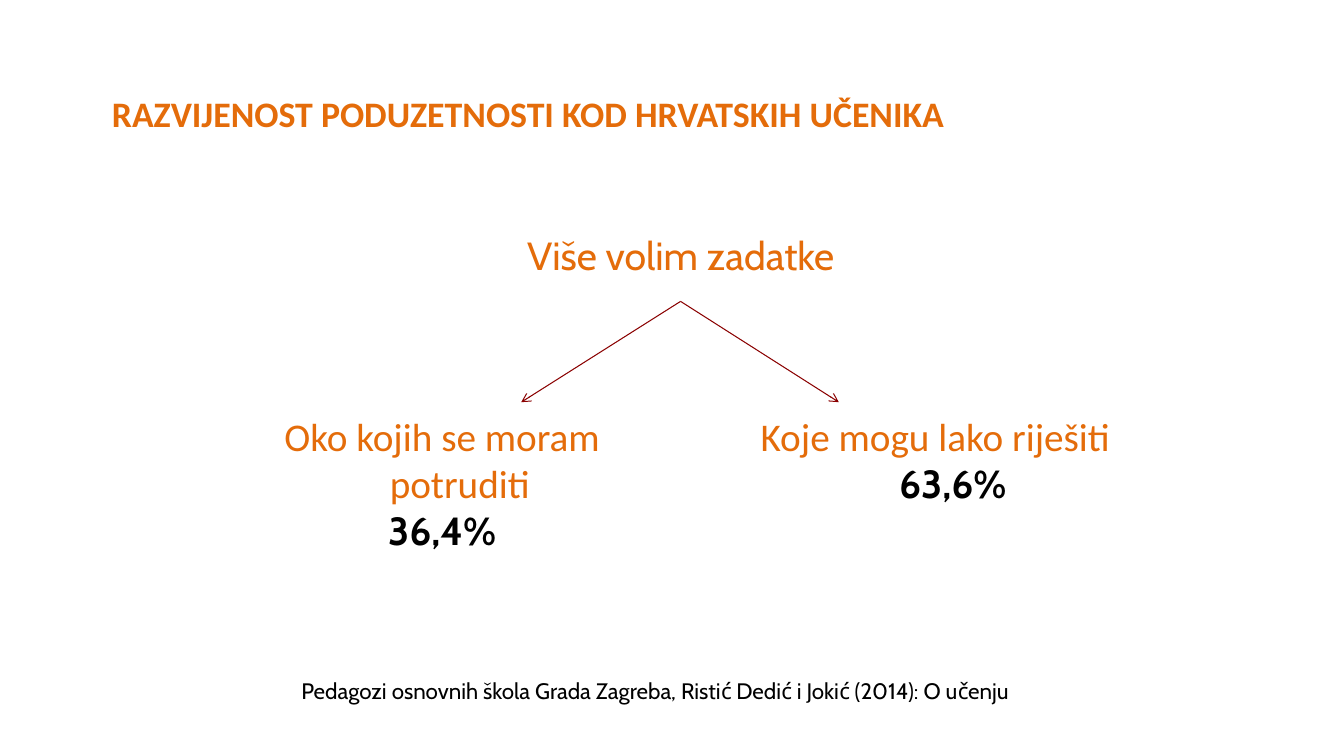
"""Build a slide showing which tasks Croatian pupils prefer."""
import pptx
import pptx.dml.color
import pptx.enum.shapes
import pptx.enum.text
import pptx.oxml
import pptx.oxml.ns
import pptx.util
from pptx.util import Inches

COLORS = {"orange": "E46C0A", "black": "000000", "arrow": "8A0000"}


def format_paragraph(paragraph, text, size, font, color, bold=False):
    paragraph.text = text
    paragraph.font.size = pptx.util.Pt(size)
    paragraph.font.name = font
    paragraph.font.bold = bold
    paragraph.font.color.rgb = pptx.dml.color.RGBColor.from_string(COLORS[color])


def add_text_box(slide, left, top, width, height):
    shape = slide.shapes.add_textbox(Inches(left), Inches(top), Inches(width), Inches(height))
    shape.text_frame.word_wrap = True
    return shape


presentation = pptx.Presentation()
presentation.slide_width = Inches(13.33)
presentation.slide_height = Inches(7.5)
slide = presentation.slides.add_slide(presentation.slide_layouts[5])

title = slide.shapes.title
title.left, title.top = Inches(1.01), Inches(0.74)
title.width, title.height = Inches(11.33), Inches(0.7)
title.text_frame.vertical_anchor = pptx.enum.text.MSO_ANCHOR.MIDDLE
title_paragraph = title.text_frame.paragraphs[0]
format_paragraph(title_paragraph, "razvijenost poduzetnosti kod hrvatskih učenika",
                 32, "Calibri", "orange", True)
title_paragraph.alignment = pptx.enum.text.PP_ALIGN.LEFT
title_paragraph.runs[0].font._element.set("cap", "small")

source = add_text_box(slide, 2.89, 6.67, 7.56, 0.37)
format_paragraph(source.text_frame.paragraphs[0],
                 "Pedagozi osnovnih škola Grada Zagreba, Ristić Dedić i Jokić (2014): O učenju",
                 16, "Cabin", "black")

question = add_text_box(slide, 3.52, 2.25, 6.46, 0.74)
question_paragraph = question.text_frame.paragraphs[0]
format_paragraph(question_paragraph, "Više volim zadatke", 28, "Cabin", "orange")
question_paragraph.alignment = pptx.enum.text.PP_ALIGN.CENTER

answers = [
    (2.26, 5.17, "Oko kojih se moram potruditi", "36,4%", -0.35),
    (7.15, 8.32, "Koje mogu lako riješiti", "63,6%", 0),
]
for left, arrow_end, answer, share, share_indent in answers:
    box = add_text_box(slide, left, 4.04, 4.25, 1.44)
    answer_paragraph = box.text_frame.paragraphs[0]
    share_paragraph = box.text_frame.add_paragraph()
    format_paragraph(answer_paragraph, answer, 28, "Calibri", "orange")
    format_paragraph(share_paragraph, share, 28, "Cabin", "black", True)
    for paragraph, indent in ((answer_paragraph, -0.35), (share_paragraph, share_indent)):
        paragraph.alignment = pptx.enum.text.PP_ALIGN.CENTER
        properties = paragraph._p.get_or_add_pPr()
        properties.set("marL", str(Inches(0.35)))
        properties.set("indent", str(Inches(indent)))

    arrow = slide.shapes.add_connector(pptx.enum.shapes.MSO_CONNECTOR.STRAIGHT,
                                       Inches(6.75), Inches(2.99),
                                       Inches(arrow_end), Inches(3.99))
    arrow.begin_connect(question, 2)
    arrow.line.width = pptx.util.Pt(0.75)
    arrow.line.color.rgb = pptx.dml.color.RGBColor.from_string(COLORS["arrow"])
    arrow_head = pptx.oxml.parse_xml(
        f'<a:tailEnd {pptx.oxml.ns.nsdecls("a")} type="arrow"/>')
    arrow.line._get_or_add_ln().append(arrow_head)
    arrow._element.spPr.append(
        pptx.oxml.parse_xml(f'<a:effectLst {pptx.oxml.ns.nsdecls("a")}/>'))

presentation.save("out.pptx")
